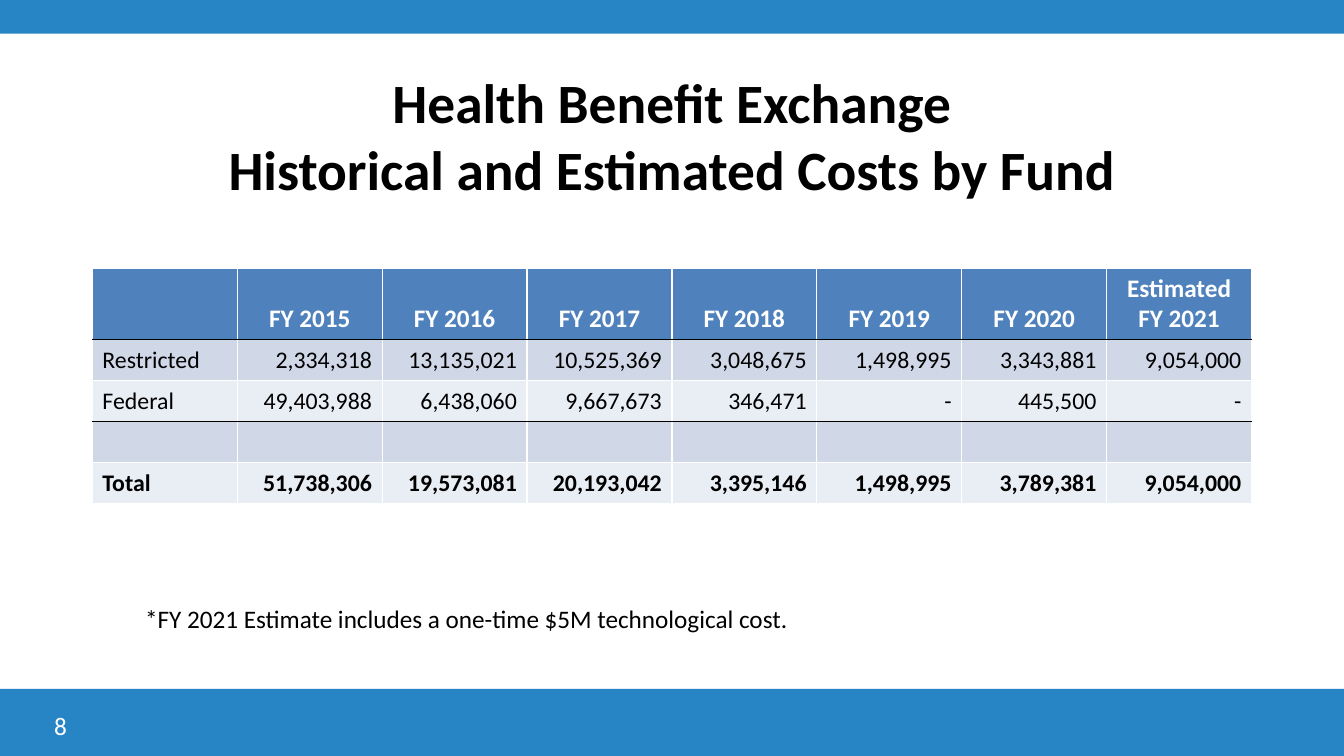
from dataclasses import dataclass

from lxml import etree
from pptx import Presentation
from pptx.dml.color import RGBColor
from pptx.enum.shapes import MSO_SHAPE
from pptx.enum.text import MSO_ANCHOR, PP_ALIGN
from pptx.oxml.ns import qn
from pptx.util import Pt

RECTANGLE = MSO_SHAPE.RECTANGLE
MIDDLE, BOTTOM = MSO_ANCHOR.MIDDLE, MSO_ANCHOR.BOTTOM
LEFT, CENTER, RIGHT = PP_ALIGN.LEFT, PP_ALIGN.CENTER, PP_ALIGN.RIGHT

BLACK, WHITE, BAR_BLUE = "000000", "FFFFFF", "2784C5"
HEADER_BLUE, DARK_BAND, LIGHT_BAND = "4F81BD", "D0D8E8", "E9EDF4"

SLIDE_WIDTH, SLIDE_HEIGHT = 960, 540
TABLE_LEFT, TABLE_TOP, TABLE_WIDTH = 66, 191.5, 828
HEADER_HEIGHT, ROW_HEIGHT = 50.9, 29.3


@dataclass
class Bar:
    top: float
    height: float


@dataclass
class Label:
    text: str
    left: float
    top: float
    width: float
    height: float
    color: str


@dataclass
class FundRow:
    values: list[str]
    fill: str
    size: float = 17
    bold: bool = False
    color: str = BLACK
    top_line: str = WHITE
    bottom_line: str = WHITE


BARS = [Bar(0, 24), Bar(492, 48)]
LABELS = [
    Label("8", 31.7, 504, 64, 29, WHITE),
    Label("*FY 2021 Estimate includes a one-time $5M technological cost.",
          96.5, 427.7, 478.8, 29, BLACK),
]
YEARS = [f"FY {year}" for year in range(2015, 2021)]
FUND_ROWS = [
    FundRow(["", *YEARS, "Estimated FY 2021"], HEADER_BLUE, 18, True, WHITE,
            bottom_line=BLACK),
    FundRow(["Restricted", "2,334,318", "13,135,021", "10,525,369", "3,048,675",
             "1,498,995", "3,343,881", "9,054,000"], DARK_BAND, top_line=BLACK),
    FundRow(["Federal", "49,403,988", "6,438,060", "9,667,673", "346,471",
             "-", "445,500", "-"], LIGHT_BAND, bottom_line=BLACK),
    FundRow([""] * 8, DARK_BAND, top_line=BLACK),
    FundRow(["Total", "51,738,306", "19,573,081", "20,193,042", "3,395,146",
             "1,498,995", "3,789,381", "9,054,000"], LIGHT_BAND, bold=True),
]


def rgb(color: str) -> RGBColor:
    return RGBColor.from_string(color)


def format_paragraph(paragraph, size: float, color: str, bold: bool = False,
                     align=LEFT) -> None:
    paragraph.alignment = align
    settings = {"name": "Calibri", "size": Pt(size), "bold": bold}
    for attribute, value in settings.items():
        setattr(paragraph.font, attribute, value)
    paragraph.font.color.rgb = rgb(color)


def draw_bar(slide, bar: Bar) -> None:
    shape = slide.shapes.add_shape(RECTANGLE, 0, Pt(bar.top), Pt(SLIDE_WIDTH), Pt(bar.height))
    shape.shadow.inherit = False
    shape.fill.solid()
    shape.fill.fore_color.rgb = rgb(BAR_BLUE)
    shape.line.fill.background()


def draw_label(slide, label: Label) -> None:
    box = slide.shapes.add_textbox(Pt(label.left), Pt(label.top),
                                   Pt(label.width), Pt(label.height))
    box.text_frame.word_wrap = True
    paragraph = box.text_frame.paragraphs[0]
    paragraph.text = label.text
    format_paragraph(paragraph, 18, label.color)


def draw_title(slide) -> None:
    title = slide.shapes.title
    place = {"left": 66, "top": 44, "width": 828, "height": 104.4}
    for attribute, value in place.items():
        setattr(title, attribute, Pt(value))
    title.text_frame.vertical_anchor = MIDDLE
    paragraph = title.text_frame.paragraphs[0]
    paragraph.add_run().text = "Health Benefit Exchange"
    paragraph.add_line_break()
    paragraph.add_run().text = "Historical and Estimated Costs by Fund"
    format_paragraph(paragraph, 39.6, BLACK, True, CENTER)


def set_borders(cell, top: str, bottom: str) -> None:
    """Put 1 pt lines on all four sides, ahead of the cell's fill."""
    properties = cell._tc.get_or_add_tcPr()
    sides = {"lnL": WHITE, "lnR": WHITE, "lnT": top, "lnB": bottom}
    for position, (side, color) in enumerate(sides.items()):
        line = etree.Element(qn(f"a:{side}"), w=str(Pt(1)))
        fill = etree.SubElement(line, qn("a:solidFill"))
        etree.SubElement(fill, qn("a:srgbClr"), val=color)
        properties.insert(position, line)


def draw_table(slide) -> None:
    column_count = len(FUND_ROWS[0].values)
    height = HEADER_HEIGHT + ROW_HEIGHT * (len(FUND_ROWS) - 1)
    table = slide.shapes.add_table(len(FUND_ROWS), column_count, Pt(TABLE_LEFT),
                                   Pt(TABLE_TOP), Pt(TABLE_WIDTH), Pt(height)).table
    for column in table.columns:
        column.width = Pt(TABLE_WIDTH / column_count)
    for row_index, fund_row in enumerate(FUND_ROWS):
        is_header = row_index == 0
        table.rows[row_index].height = Pt(HEADER_HEIGHT if is_header else ROW_HEIGHT)
        for column_index, value in enumerate(fund_row.values):
            cell = table.cell(row_index, column_index)
            cell.fill.solid()
            cell.fill.fore_color.rgb = rgb(fund_row.fill)
            cell.vertical_anchor = BOTTOM if is_header else MIDDLE
            set_borders(cell, fund_row.top_line, fund_row.bottom_line)
            align = CENTER if is_header else RIGHT if column_index else LEFT
            paragraph = cell.text_frame.paragraphs[0]
            if value:
                paragraph.text = value
            format_paragraph(paragraph, fund_row.size, fund_row.color, fund_row.bold, align)


def main() -> None:
    presentation = Presentation()
    presentation.slide_width = Pt(SLIDE_WIDTH)
    presentation.slide_height = Pt(SLIDE_HEIGHT)
    title_only = presentation.slide_layouts[5]
    slide = presentation.slides.add_slide(title_only)
    for bar in BARS:
        draw_bar(slide, bar)
    draw_title(slide)
    draw_table(slide)
    for label in LABELS:
        draw_label(slide, label)
    presentation.save("out.pptx")


if __name__ == "__main__":
    main()
